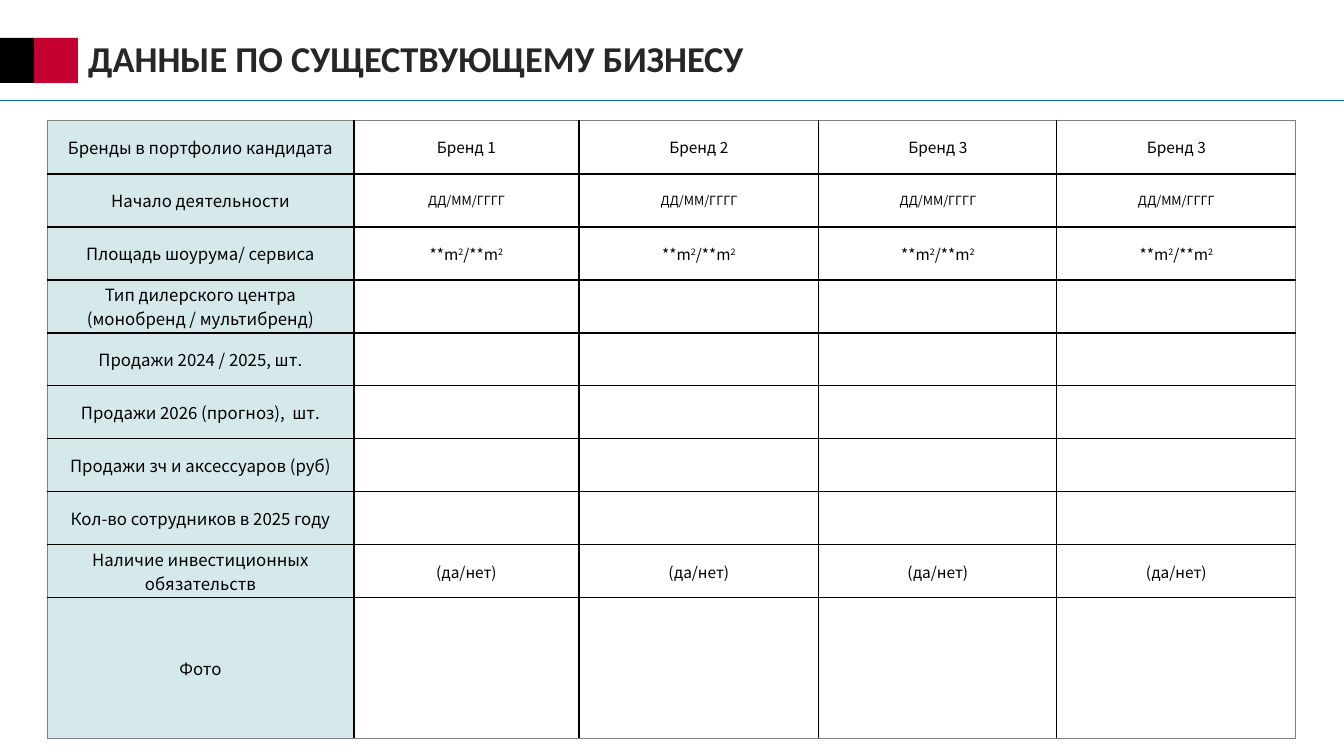
from lxml import etree
from pptx import Presentation
from pptx.dml.color import RGBColor
from pptx.enum.shapes import MSO_CONNECTOR, MSO_SHAPE
from pptx.enum.text import MSO_ANCHOR, MSO_AUTO_SIZE, PP_ALIGN
from pptx.oxml.ns import qn
from pptx.util import Pt

LINE, RECT = MSO_CONNECTOR.STRAIGHT, MSO_SHAPE.RECTANGLE
MIDDLE, FIXED = MSO_ANCHOR.MIDDLE, MSO_AUTO_SIZE.NONE
LEFT, CENTER = PP_ALIGN.LEFT, PP_ALIGN.CENTER
PX = 12192000 / 1344
HEX = {"black": "000000", "red": "C3002F", "blue": "0070C0", "dark": "262626",
       "mint": "D6E9EA", "white": "FFFFFF", "gray": "808080"}


def write(frame, text, size=12, face="Noto Sans CJK SC", color="black",
          bold=False, align=CENTER, space=None):
    """Fill a frame: newline splits paragraphs, text between bars is superscript."""
    for n, row in enumerate(text.split("\n")):
        para = frame.add_paragraph() if n else frame.paragraphs[0]
        para.alignment = align
        para.line_spacing = space
        for i, part in enumerate(row.split("|")):
            if not part:
                continue
            run = para.add_run()
            run.text = part
            run.font.size = Pt(size)
            run.font.name = face
            run.font.bold = bold
            run.font.color.rgb = RGBColor.from_string(HEX[color])
            if i % 2:
                run.font._element.set("baseline", "30000")


def edge(cell, side, color, width):
    """Draw one border of a cell; side is L, R, T or B."""
    ln = etree.SubElement(cell._tc.get_or_add_tcPr(), qn("a:ln" + side),
                          w=str(Pt(width)))
    fill = etree.SubElement(ln, qn("a:solidFill"))
    etree.SubElement(fill, qn("a:srgbClr"), val=HEX[color])


deck = Presentation()
deck.slide_width, deck.slide_height = round(1344 * PX), round(756 * PX)
slide = deck.slides.add_slide(deck.slide_layouts[5])
shapes = slide.shapes

# Header
rule = shapes.add_connector(LINE, 0, round(100 * PX), deck.slide_width, round(100 * PX))
rule.line.color.rgb = RGBColor.from_string(HEX["blue"])
rule.line.width = Pt(0.5)
etree.SubElement(rule._element.spPr, qn("a:effectLst"))

for left, width, color in ((0, 34, "black"), (34, 44, "red")):
    block = shapes.add_shape(RECT, *(round(v * PX) for v in (left, 38, width, 45)))
    block.shadow.inherit = False
    block.fill.solid()
    block.fill.fore_color.rgb = RGBColor.from_string(HEX[color])
    block.line.fill.background()

title = shapes.title
title.left, title.top, title.width, title.height = (
    round(v * PX) for v in (78, 30, 1228, 62))
frame = title.text_frame
frame.word_wrap = True
frame.auto_size = FIXED
frame.vertical_anchor = MIDDLE
write(frame, "ДАННЫЕ ПО СУЩЕСТВУЮЩЕМУ БИЗНЕСУ", size=26, face="Calibri",
      color="dark", bold=True, align=LEFT, space=0.9)

# Table: label, values, value size, label insets, value insets
EMPTY = [""] * 4
ROWS = [
    ("Бренды в портфолио кандидата", ["Бренд 1", "Бренд 2", "Бренд 3", "Бренд 3"],
     11, (12, 5), (10, 4)),
    ("Начало деятельности", ["ДД/ММ/ГГГГ"] * 4, 9, (0, 0), (10, 0)),
    ("Площадь шоурума/ сервиса", ["**m|2|/**m|2|"] * 4, 11, (0, 0), (10, 0)),
    ("Тип дилерского центра\n(монобренд / мультибренд)", EMPTY, 11, (0, 0), (10, 0)),
    ("Продажи 2024 / 2025, шт.", EMPTY, 11, (0, 0), (10, 0)),
    ("Продажи 2026 (прогноз),  шт.", EMPTY, 11, (0, 0), (10, 0)),
    ("Продажи зч и аксессуаров (руб)", EMPTY, 11, (0, 0), (10, 0)),
    ("Кол-во сотрудников в 2025 году", EMPTY, 11, (0, 0), (10, 0)),
    ("Наличие инвестиционных обязательств", ["(да/нет)"] * 4, 11, (0, 0), (12, 0)),
    ("Фото", EMPTY, 11, (12, 0), (10, 0)),
]
WIDTHS = [307, 225, 240, 238, 239]
HEIGHTS = [54] + [53] * 8 + [141]

table = shapes.add_table(len(ROWS), len(WIDTHS), *(
    round(v * PX) for v in (47, 120, sum(WIDTHS), sum(HEIGHTS)))).table
table.first_row = table.horz_banding = False
for col, width in zip(table.columns, WIDTHS):
    col.width = round(width * PX)
for row, height in zip(table.rows, HEIGHTS):
    row.height = round(height * PX)

for r, (label, values, size, label_pad, value_pad) in enumerate(ROWS):
    for c, text in enumerate([label] + values):
        cell = table.cell(r, c)
        side, top = value_pad if c else label_pad
        cell.margin_left = cell.margin_right = round(side * PX)
        cell.margin_top = cell.margin_bottom = round(top * PX)
        cell.vertical_anchor = MIDDLE
        outer = {"L": c == 0, "R": c == len(WIDTHS) - 1,
                 "T": r == 0, "B": r == len(ROWS) - 1}
        for name, out in outer.items():
            edge(cell, name, *(("gray", 0.75) if out else ("black", 1)))
        cell.fill.solid()
        cell.fill.fore_color.rgb = RGBColor.from_string(HEX["white" if c else "mint"])
        write(cell.text_frame, text, size=size if c else 12)

deck.save("out.pptx")
